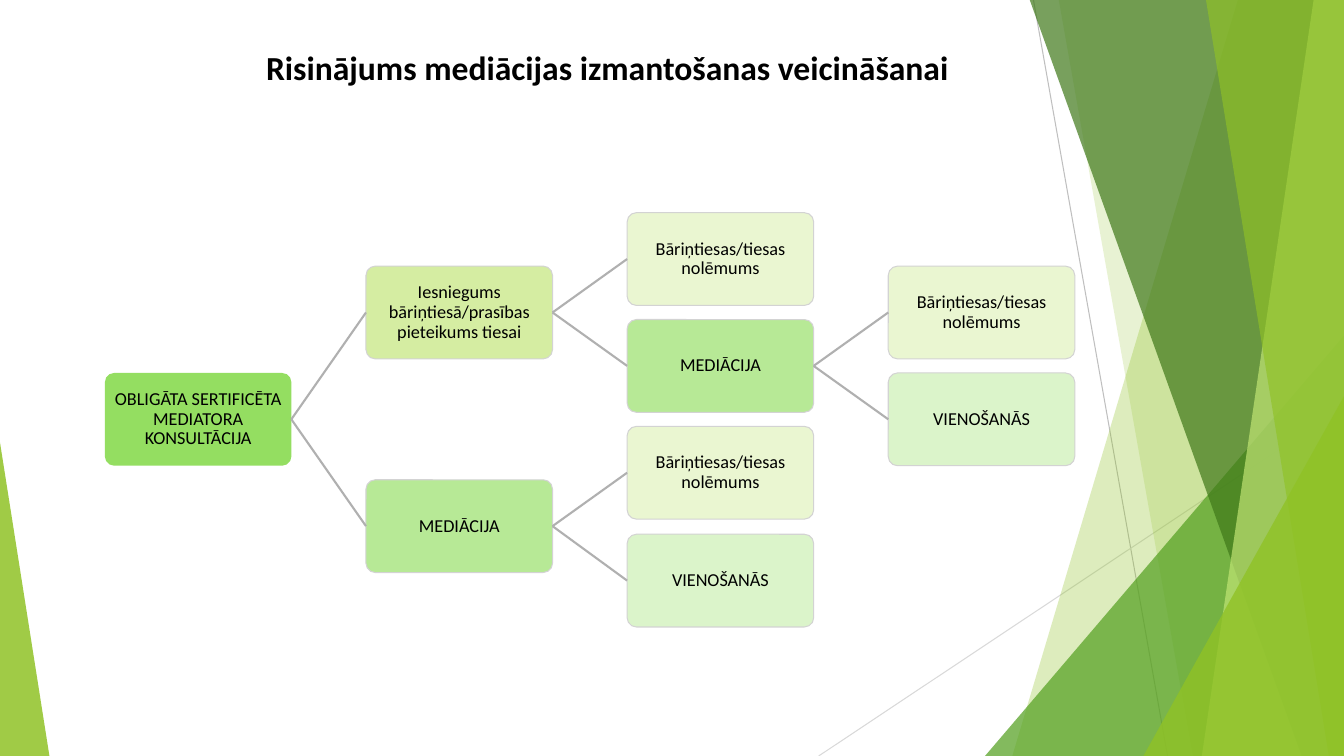
from dataclasses import dataclass

from lxml.etree import SubElement
from pptx import Presentation
from pptx.dml.color import RGBColor
from pptx.enum.shapes import MSO_CONNECTOR, MSO_SHAPE
from pptx.enum.text import MSO_ANCHOR, PP_ALIGN
from pptx.oxml.ns import qn
from pptx.util import Pt

PX = 9144
SLIDE_W, SLIDE_H = 1333, 750
NODE_W, NODE_H = 185, 92
TREE_DEPTHS, TREE_ROWS = 3, 6
FONT = "Calibri"

BLACK = RGBColor(0x00, 0x00, 0x00)
BRANCH = RGBColor(0xB0, 0xB0, 0xB0)
NODE_EDGE = RGBColor(0xD3, 0xD3, 0xD3)
RAY_DARK = RGBColor(0xBF, 0xBF, 0xBF)
RAY_LIGHT = RGBColor(0xD9, 0xD9, 0xD9)
LIME = RGBColor(0x90, 0xC2, 0x26)
GREEN = RGBColor(0x54, 0xA0, 0x21)
FOREST = RGBColor(0x3F, 0x78, 0x19)
PALE_LIME = RGBColor(0xC0, 0xE4, 0x74)
CONSULTATION = RGBColor(0x94, 0xDE, 0x61)
APPLICATION = RGBColor(0xD5, 0xED, 0xA2)
MEDIATION = RGBColor(0xB7, 0xE9, 0x96)
RULING = RGBColor(0xEA, 0xF6, 0xD1)
AGREEMENT = RGBColor(0xDB, 0xF4, 0xCA)


@dataclass
class Step:
    """One step of the decision tree; spread is the row offset of its branches."""
    text: str
    fill: RGBColor
    edge: RGBColor = NODE_EDGE
    spread: int = 1
    branches: tuple = ()


COURT_RULING = Step("Bāriņtiesas/tiesas nolēmums", RULING)
SETTLEMENT = Step("VIENOŠANĀS", AGREEMENT)
MEDIATED = Step("MEDIĀCIJA", MEDIATION, branches=(COURT_RULING, SETTLEMENT))
FILED = Step("Iesniegums bāriņtiesā/prasības pieteikums tiesai", APPLICATION,
             branches=(COURT_RULING, MEDIATED))
CONSULTED = Step("OBLIGĀTA SERTIFICĒTA MEDIATORA KONSULTĀCIJA", CONSULTATION,
                 edge=None, spread=2, branches=(FILED, MEDIATED))


def px(*lengths):
    """Turn pixel lengths into EMU."""
    return [length * PX for length in lengths]


def add_line(slide, ends, color, width):
    """Draw a straight line without shadow."""
    line = slide.shapes.add_connector(MSO_CONNECTOR.STRAIGHT, *px(*ends))
    line.line.color.rgb = color
    line.line.width = Pt(width)
    SubElement(line._element.spPr, qn("a:effectLst"))
    return line


def paint_facet(facet, color, opacity):
    """Give a facet a translucent fill and no outline."""
    facet.shadow.inherit = False
    facet.fill.solid()
    facet.fill.fore_color.rgb = color
    facet.line.fill.background()
    tint = facet._element.spPr.find(".//" + qn("a:srgbClr"))
    SubElement(tint, qn("a:alpha"), val=str(opacity * 1000))


def add_pane(slide, right, bottom, top_inset, bottom_inset, color, opacity):
    """Draw a full-height pane against the right edge."""
    outline = slide.shapes.build_freeform(right - top_inset, -1, scale=PX)
    outline.add_line_segments(
        [(right, -1), (right, bottom), (right - bottom_inset, bottom)])
    paint_facet(outline.convert_to_shape(), color, opacity)


def add_corner(slide, left, bottom, width, height, apex, color, opacity):
    """Draw a right triangle standing on the bottom edge."""
    corner = slide.shapes.add_shape(
        MSO_SHAPE.ISOSCELES_TRIANGLE, *px(left, bottom - height, width, height))
    corner.adjustments[0] = apex
    paint_facet(corner, color, opacity)


def add_backdrop(slide, left, top, width, height):
    """Draw the rays and green facets along the slide edges."""
    right, bottom = left + width, top + height
    add_line(slide, (right - 308, top, right - 175, bottom), RAY_DARK, 0.75)
    add_line(slide, (right, bottom - 347, right - 521, bottom), RAY_LIGHT, 0.75)
    add_pane(slide, right, bottom, 105, 329, LIME, 30)
    add_pane(slide, right, bottom, 283, 150, LIME, 20)
    add_corner(slide, right - 356, bottom, 356, 417, 1, GREEN, 72)
    add_pane(slide, right, bottom, 312, 42, FOREST, 70)
    add_pane(slide, right, bottom, 30, 141, PALE_LIME, 70)
    add_pane(slide, right, bottom, 137, 15, LIME, 65)
    add_corner(slide, right - 199, bottom, 199, 357, 1, LIME, 80)
    add_corner(slide, left, bottom, 49, 311, 0, LIME, 85)


def write(paragraph, text, size, bold=False):
    """Add one black run to a paragraph."""
    run = paragraph.add_run()
    run.text = text
    run.font.name = FONT
    run.font.size = Pt(size)
    run.font.bold = bold
    run.font.color.rgb = BLACK


def add_title(slide, left, top, width, height):
    """Write the slide heading."""
    heading = slide.shapes.add_textbox(*px(left, top, width, height)).text_frame
    heading.word_wrap = True
    write(heading.paragraphs[0], "Risinājums mediācijas izmantošanas veicināšanai", 24, True)


def add_node(slide, step, left, top):
    """Draw the rounded box of one step."""
    node = slide.shapes.add_shape(
        MSO_SHAPE.ROUNDED_RECTANGLE, *px(left, top, NODE_W, NODE_H))
    node.adjustments[0] = 0.1
    node.shadow.inherit = False
    node.fill.solid()
    node.fill.fore_color.rgb = step.fill
    if step.edge is None:
        node.line.fill.background()
    else:
        node.line.color.rgb = step.edge
        node.line.width = Pt(0.75)
    label = node.text_frame
    label.word_wrap = True
    label.vertical_anchor = MSO_ANCHOR.MIDDLE
    label.margin_left = label.margin_right = label.margin_top = label.margin_bottom = PX
    paragraph = label.paragraphs[0]
    paragraph.alignment = PP_ALIGN.CENTER
    paragraph.line_spacing = 0.9
    write(paragraph, step.text, 13)
    return node


def add_tree(slide, step, box, depth=0, row=TREE_ROWS // 2):
    """Draw a step and its branches inside the box, left to right."""
    left, top, width, height = box
    node = add_node(slide, step,
                    left + (width - NODE_W) * depth // TREE_DEPTHS,
                    top + (height - NODE_H) * row // TREE_ROWS)
    for branch, shift in zip(step.branches, (-step.spread, step.spread)):
        target = add_tree(slide, branch, box, depth + 1, row + shift)
        link = add_line(slide, (0, 0, 0, 0), BRANCH, 1.5)
        link.begin_connect(node, 3)
        link.end_connect(target, 1)
    return node


def main():
    """Build and save the slide."""
    deck = Presentation()
    deck.slide_width, deck.slide_height = px(SLIDE_W, SLIDE_H)
    slide = deck.slides.add_slide(deck.slide_layouts[6])
    add_backdrop(slide, 0, 0, SLIDE_W, SLIDE_H)
    add_title(slide, 254, 42, 779, 107)
    add_tree(slide, CONSULTED, (104, 211, 962, 411))
    deck.save("out.pptx")


if __name__ == "__main__":
    main()
